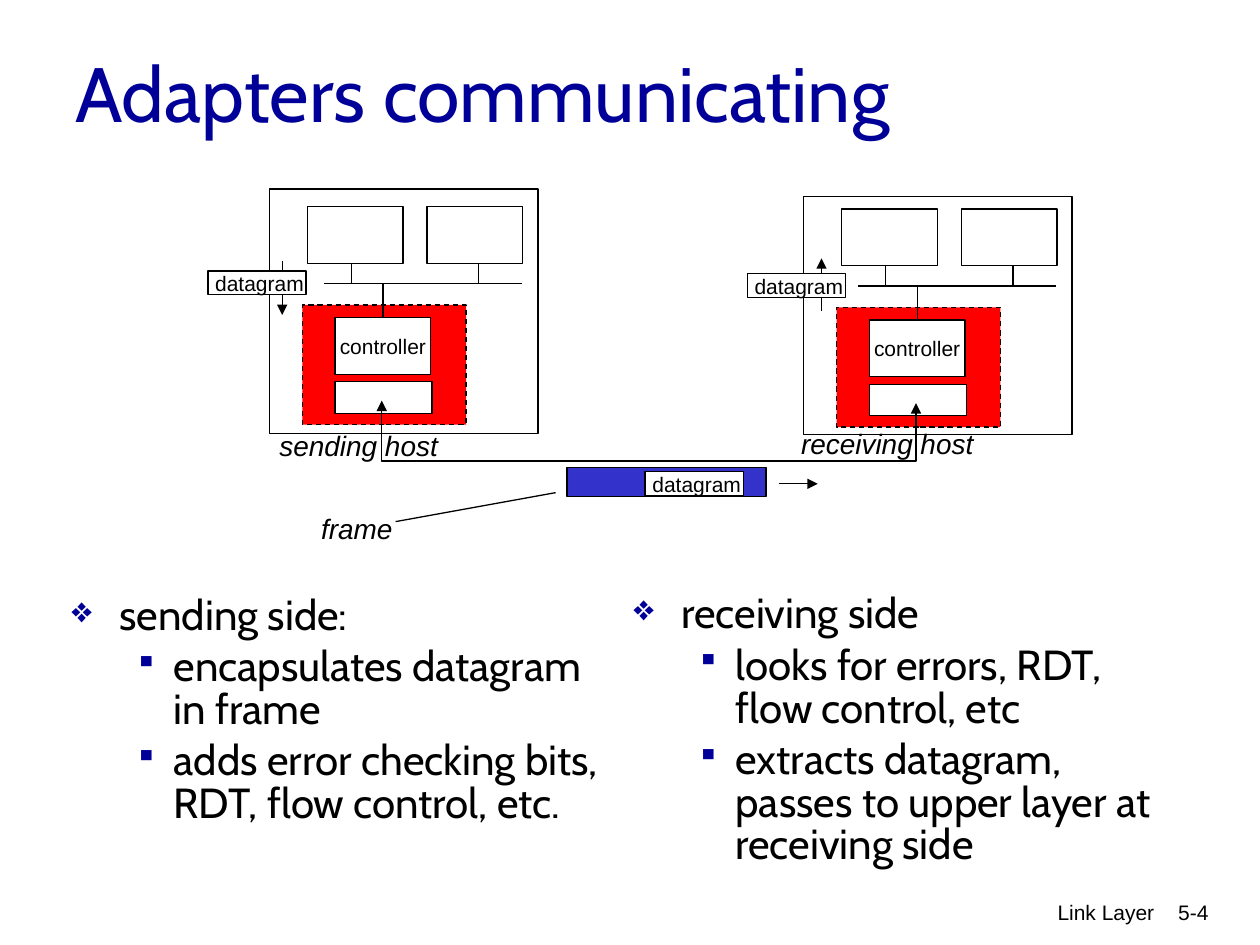
"""Build the slide on adapters that exchange a datagram in a frame."""
from lxml.etree import SubElement
from pptx import Presentation
from pptx.dml.color import RGBColor
from pptx.enum.dml import MSO_LINE
from pptx.enum.shapes import MSO_CONNECTOR, MSO_SHAPE
from pptx.enum.text import MSO_ANCHOR, MSO_AUTO_SIZE, PP_ALIGN
from pptx.oxml.ns import qn
from pptx.util import Pt

PX = 9144
INK = {"black": "000000", "white": "FFFFFF", "red": "FF0000", "blue": "3333CC", "navy": "000099"}
HUE = {name: RGBColor.from_string(code) for name, code in INK.items()}


def box(left, top, width, height, fill="white"):
    shape = shapes.add_shape(MSO_SHAPE.RECTANGLE, left * PX, top * PX, width * PX, height * PX)
    shape.shadow.inherit = False
    shape.fill.solid()
    shape.fill.fore_color.rgb = HUE[fill]
    shape.line.color.rgb = HUE["black"]
    shape.line.width = Pt(0.75)
    return shape


def write(par, text, size, font="Arial", color="black", italic=False):
    run = par.add_run()
    run.text = text
    run.font.size = Pt(size)
    run.font.name = font
    run.font.italic = italic
    run.font.color.rgb = HUE[color]


deck = Presentation()
deck.slide_width = 1000 * PX
deck.slide_height = 750 * PX
slide = deck.slides.add_slide(deck.slide_layouts[6])
shapes = slide.shapes

title = shapes.add_textbox(50 * PX, 10 * PX, 850 * PX, 125 * PX).text_frame
title.word_wrap = True
title.vertical_anchor = MSO_ANCHOR.MIDDLE
write(title.paragraphs[0], "Adapters communicating", 44, "Cabin", "navy")

for text, left, width in [("Link Layer", 609, 317), ("5-4", 895, 74)]:
    frame = shapes.add_textbox(left * PX, 709 * PX, width * PX, 50 * PX).text_frame
    frame.word_wrap = True
    frame.paragraphs[0].alignment = PP_ALIGN.RIGHT
    write(frame.paragraphs[0], text, 12)

columns = [
    (47, 468, 445, 212, ["sending side:", "encapsulates datagram in frame",
                         "adds error checking bits, RDT, flow control, etc."]),
    (493, 467, 447, 202, ["receiving side", "looks for errors, RDT, flow control, etc",
                          "extracts datagram, passes to upper layer at receiving side"]),
]
levels = [("❖", 38, 38, 85), ("▪", 81, 31, 75)]
for left, top, width, height, items in columns:
    frame = shapes.add_textbox(left * PX, top * PX, width * PX, height * PX).text_frame
    frame.word_wrap = True
    for row, text in enumerate(items):
        par = frame.add_paragraph() if row else frame.paragraphs[0]
        par.level = min(row, 1)
        mark, margin, hang, scale = levels[par.level]
        par.line_spacing = 0.85
        par.space_before = Pt(4.8)
        props = par._p.get_or_add_pPr()
        props.set("marL", str(margin * PX))
        props.set("indent", str(-hang * PX))
        tint = SubElement(props, qn("a:buClr"))
        SubElement(tint, qn("a:srgbClr"), val=INK["navy"])
        SubElement(props, qn("a:buSzPct"), val=str(scale * 1000))
        SubElement(props, qn("a:buChar"), char=mark)
        write(par, text, 24, "Cabin")

box(450, 371, 158, 23, "blue")
wires = [(224, 207, 224, 250, True, None), (652, 247, 652, 205, True, None),
         (618, 384, 649, 384, True, None), (314, 414, 441, 391, False, None)]
for left, top, height, dx, dy in [(214, 150, 194, 0, 0), (638, 156, 189, 424, 2)]:
    box(left, top, 213, height)
    card = box(240 + dx, 242 + dy, 130, 95, "red")
    card.line.dash_style = MSO_LINE.DASH
    box(266 + dx, 303 + dy, 77, 25)
    chip = box(266 + dx, 252 + dy, 76, 45)
    frame = chip.text_frame
    frame.word_wrap = False
    frame.vertical_anchor = MSO_ANCHOR.MIDDLE
    frame.paragraphs[0].alignment = PP_ALIGN.CENTER
    write(frame.paragraphs[0], "controller", 12)
    for unit in (244, 339):
        box(unit + dx, 164 + dy, 76, 45)
    bus = 225 + dy
    wires.append((257 + dx, bus, 414 + dx, bus, False, None))
    wires.append((304 + dx, 252 + dy, 304 + dx, bus, False, chip))
    for drop in (279, 380):
        wires.append((drop + dx, bus, drop + dx, 209 + dy, False, None))

for x1, y1, x2, y2, arrow, chip in wires:
    wire = shapes.add_connector(MSO_CONNECTOR.STRAIGHT, x1 * PX, y1 * PX, x2 * PX, y2 * PX)
    if chip:
        wire.begin_connect(chip, 0)
    wire.line.color.rgb = HUE["black"]
    wire.line.width = Pt(0.75)
    if arrow:
        SubElement(wire.element.spPr.find(qn("a:ln")), qn("a:tailEnd"), type="triangle")
    SubElement(wire.element.spPr, qn("a:effectLst"))

labels = [("sending host", 212, 335, 146, 37, 16), ("receiving host", 626, 334, 157, 37, 16),
          ("frame", 245, 401, 77, 37, 16)]
for left, top in [(165, 215), (593, 217), (512, 374)]:
    box(left, top, 78, 19)
    labels.append(("datagram", left - 4, top - 5, 96, 30, 12))

for text, left, top, width, height, size in labels:
    frame = shapes.add_textbox(left * PX, top * PX, width * PX, height * PX).text_frame
    frame.word_wrap = False
    frame.auto_size = MSO_AUTO_SIZE.SHAPE_TO_FIT_TEXT
    write(frame.paragraphs[0], text, size, italic=size == 16)

pen = shapes.build_freeform(303, 318, scale=PX)
pen.add_line_segments([(303, 366), (727, 366), (727, 320)], close=False)
link = pen.convert_to_shape()
link.shadow.inherit = False
link.fill.background()
link.line.color.rgb = HUE["black"]
link.line.width = Pt(0.75)
for end in ("a:headEnd", "a:tailEnd"):
    SubElement(link.element.spPr.find(qn("a:ln")), qn(end), type="triangle")

deck.save("out.pptx")
